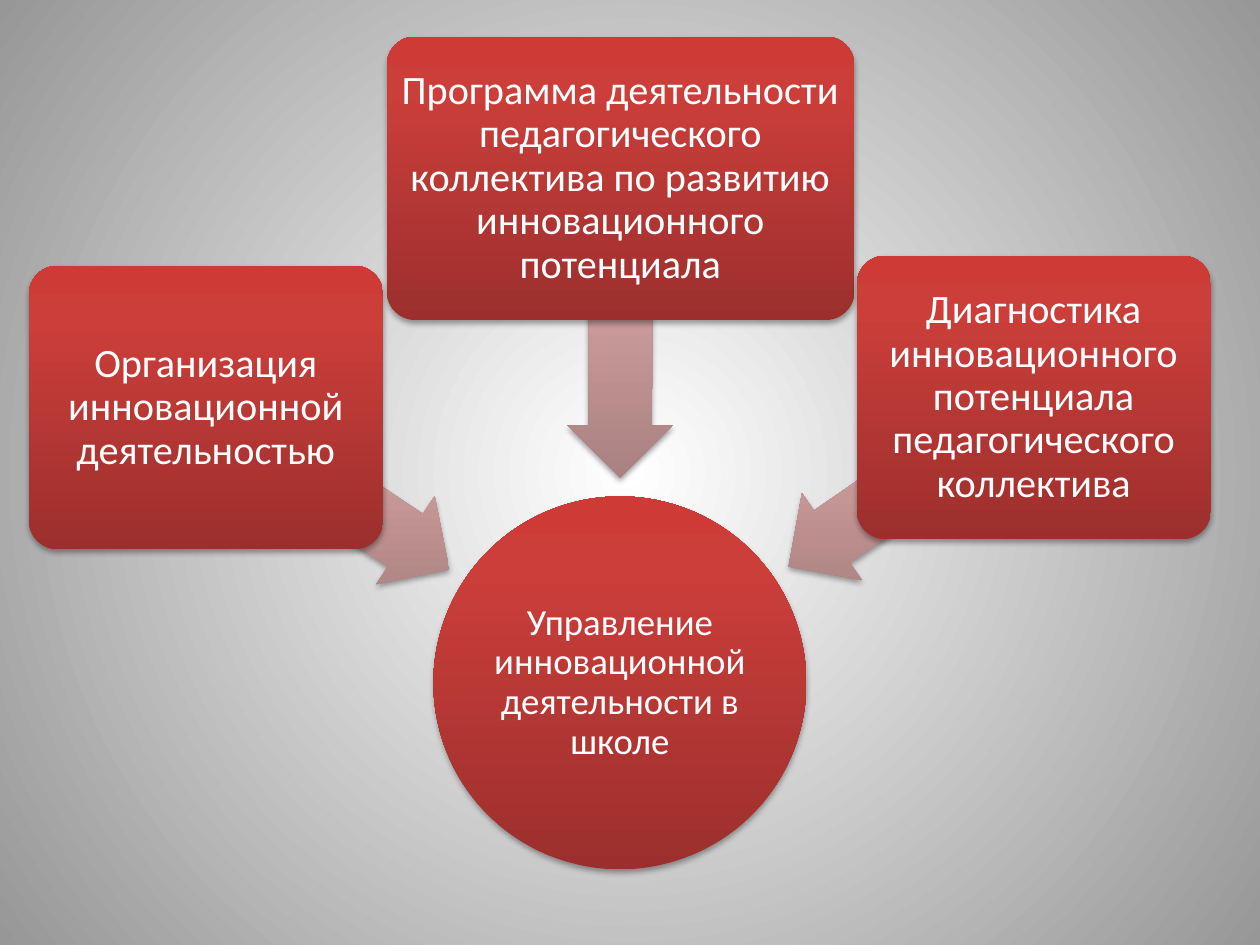
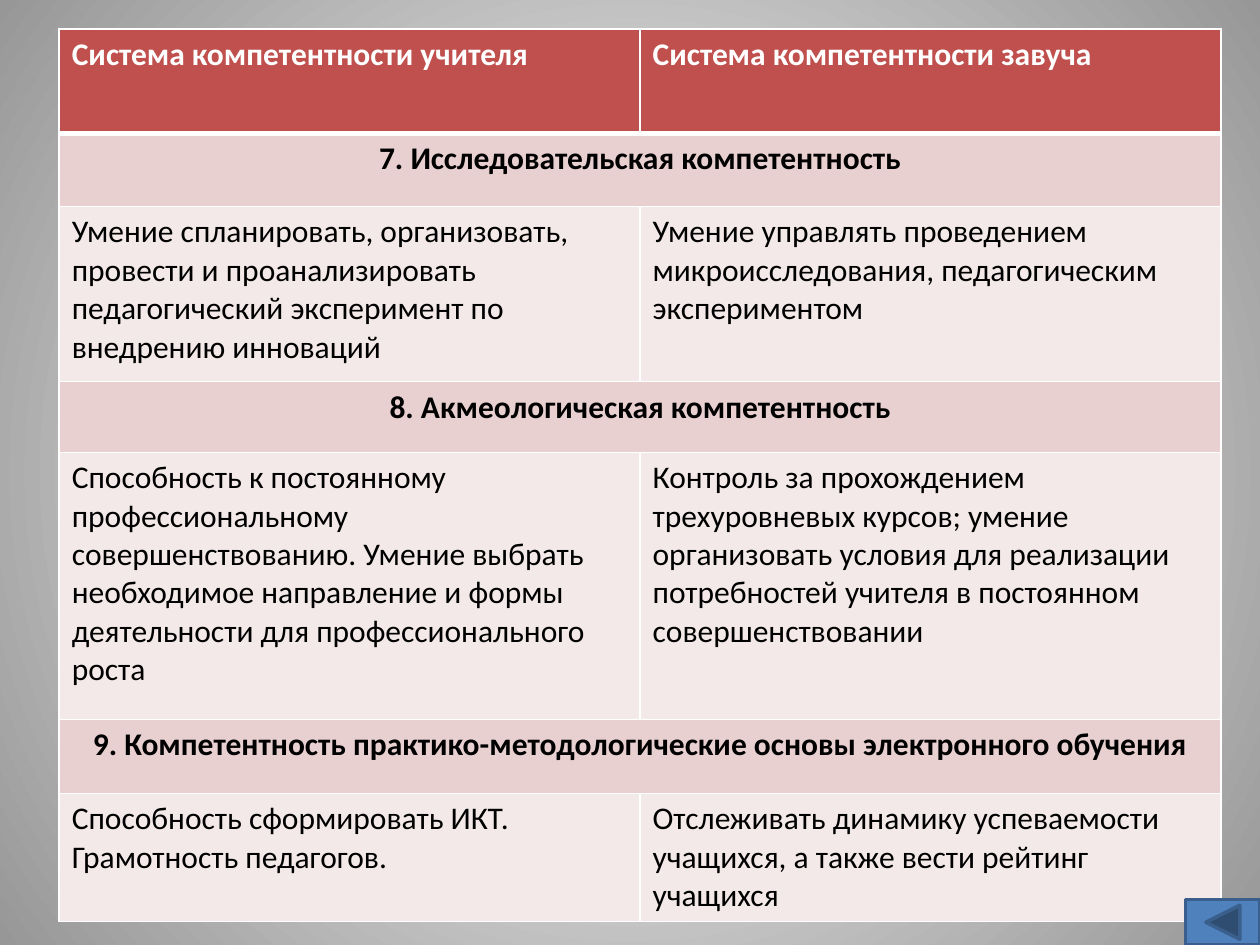
from math import atan2, cos, degrees, hypot, sin

from lxml.etree import SubElement as Sub
from pptx import Presentation
from pptx.dml.color import RGBColor as RGB
from pptx.enum.shapes import MSO_SHAPE as Shape
from pptx.enum.text import MSO_ANCHOR as Anchor, PP_ALIGN as Align
from pptx.oxml.ns import qn
from pptx.util import Inches, Pt

# Slide 1: a hub with a ring of boxes that point at it
HUB = ("Управление инновационной деятельности в школе", 3.44, 3.94, 2.96, 2.96)
BOXES = [
    ("Организация инновационной деятельностью", 0.23, 2.11, 2.81, 2.25),
    ("Программа деятельности педагогического коллектива по развитию "
     "инновационного потенциала", 3.07, 0.29, 3.71, 2.25),
    ("Диагностика инновационного потенциала педагогического коллектива",
     6.8, 2.03, 2.81, 2.25),
]
GAP = 0.145  # from arrow tip to hub
THICK = 0.84

# Slide 2: height and texts of each row; a single text spans both columns
ROWS = [
    (0.83, "Система компетентности учителя", "Система компетентности завуча"),
    (0.58, "7. Исследовательская компетентность"),
    (1.39, "Умение спланировать, организовать, провести и проанализировать "
           "педагогический эксперимент по внедрению инноваций",
           "Умение управлять проведением микроисследования, педагогическим "
           "экспериментом"),
    (0.56, "8. Акмеологическая компетентность"),
    (2.12, "Способность к постоянному профессиональному совершенствованию. "
           "Умение выбрать необходимое направление и формы деятельности для "
           "профессионального роста",
           "Контроль за прохождением трехуровневых курсов; умение организовать "
           "условия для реализации потребностей учителя в постоянном "
           "совершенствовании"),
    (0.59, "9. Компетентность практико-методологические основы электронного "
           "обучения"),
    (0.99, "Способность сформировать ИКТ. Грамотность педагогов.",
           "Отслеживать динамику успеваемости учащихся, а также вести рейтинг "
           "учащихся"),
]
TABLE = (0.47, 0.23, 9.22, 7.06)
BUTTON = (9.41, 7.14, 0.59, 0.36)

FONT = "Calibri"
WHITE = RGB(0xFF, 0xFF, 0xFF)
BLACK = RGB(0, 0, 0)
GREY = RGB(0x97, 0x97, 0x97)
HEAD = RGB(0xC0, 0x50, 0x4D)
BAND = RGB(0xE8, 0xD0, 0xD0)
PALE = RGB(0xF4, 0xE9, 0xE9)
BLUE = RGB(0x4F, 0x81, 0xBD)
NAVY = RGB(0x3A, 0x5F, 0x8C)
BACK = [(0, WHITE), (100, GREY)]
RED = [(0, RGB(0x9C, 0x2F, 0x2D)), (80, RGB(0xCB, 0x3E, 0x3A)),
       (100, RGB(0xCE, 0x3B, 0x37))]
PINK = [(0, RGB(0xA9, 0x81, 0x80)), (80, RGB(0xDB, 0xA7, 0xA7)),
        (100, RGB(0xDD, 0xA7, 0xA6))]


def add(node, tag, **attrs):
    return Sub(node, qn(tag), {k: str(v) for k, v in attrs.items()})


def blend(node, stops, radial=False):
    """Replace the solid fill directly under node with a gradient."""
    old = node.find(qn("a:solidFill"))
    grad = add(node, "a:gradFill", rotWithShape=0)
    node.replace(old, grad)
    group = add(grad, "a:gsLst")
    for pos, color in stops:
        stop = add(group, "a:gs", pos=pos * 1000)
        add(stop, "a:srgbClr", val=color)
    if radial:
        ring = add(grad, "a:path", path="circle")
        add(ring, "a:fillToRect", l=50000, t=50000, r=50000, b=50000)
    else:
        add(grad, "a:lin", ang=270 * 60000, scaled=0)


def write(frame, text, align, **look):
    frame.text = text
    para = frame.paragraphs[0]
    para.alignment = align
    font = para.runs[0].font
    font.name = FONT
    font.color.rgb = look.pop("color")
    for key, val in look.items():
        setattr(font, key, val)
    return para


def place(slide, kind, at):
    shape = slide.shapes.add_shape(kind, *map(Inches, at))
    shape.shadow.inherit = False
    shape.fill.solid()
    return shape


def glossy(slide, kind, at, stops):
    """Shape with a vertical gradient, no outline and a soft shadow."""
    shape = place(slide, kind, at)
    shape.line.fill.background()
    props = shape.element.spPr
    blend(props, stops)
    shade = add(props.find(qn("a:effectLst")), "a:outerShdw", blurRad=Pt(3.1),
                dist=Pt(1.8), dir=90 * 60000, rotWithShape=0)
    color = add(shade, "a:srgbClr", val=BLACK)
    add(color, "a:alpha", val=35000)
    return shape


def label(shape, text, size, inset):
    frame = shape.text_frame
    frame.word_wrap = True
    frame.vertical_anchor = Anchor.MIDDLE
    for side in ("left", "top", "right", "bottom"):
        setattr(frame, "margin_" + side, Inches(inset))
    para = write(frame, text, Align.CENTER, color=WHITE, size=Pt(size))
    para.line_spacing = 0.9


def center(at):
    x, y, w, h = at
    return x + w / 2, y + h / 2


def arrow(slide, box, hub):
    """Arrow from the centre of the box to just short of the hub."""
    (x, y), (hx, hy) = center(box), center(hub)
    turn = atan2(hy - y, hx - x)
    size = hypot(hx - x, hy - y) - hub[2] / 2 - GAP
    mx, my = x + cos(turn) * size / 2, y + sin(turn) * size / 2
    at = (mx - size / 2, my - THICK / 2, size, THICK)
    shape = glossy(slide, Shape.LEFT_ARROW, at, PINK)
    shape.rotation = degrees(turn) + 180
    shape.adjustments[0], shape.adjustments[1] = 0.6, 0.5


def scheme(slide):
    text, *hub = HUB
    label(glossy(slide, Shape.OVAL, hub, RED), text, 21, 0.01)
    for text, *box in BOXES:
        arrow(slide, box, hub)
        shape = glossy(slide, Shape.ROUNDED_RECTANGLE, box, RED)
        shape.adjustments[0] = 0.1
        label(shape, text, 23, 0.05)


def paint(cell, fill, widths):
    """Fill the cell and rule its left, right, top and bottom edges."""
    props = cell._tc.get_or_add_tcPr()
    for side, width in zip("LRTB", widths):
        line = add(props, "a:ln" + side, w=Pt(width))
        add(add(line, "a:solidFill"), "a:srgbClr", val=WHITE)
    cell.fill.solid()
    cell.fill.fore_color.rgb = fill


def matrix(slide):
    grid = slide.shapes.add_table(len(ROWS), 2, *map(Inches, TABLE)).table
    for i, (height, *texts) in enumerate(ROWS):
        grid.rows[i].height = Inches(height)
        head, span = i == 0, len(texts) == 1
        fill = HEAD if head else BAND if span else PALE
        cells = [grid.cell(i, j) for j in range(2)]
        for cell in cells:
            paint(cell, fill, (1, 1, 3 if i == 1 else 1, 3 if head else 1))
        if span:
            cells[0].merge(cells[1])
        for cell, text in zip(cells, texts):
            write(cell.text_frame, text, Align.CENTER if span else Align.LEFT,
                  color=WHITE if head else BLACK, size=Pt(18),
                  bold=head or span)
    button = place(slide, Shape.ACTION_BUTTON_BACK_OR_PREVIOUS, BUTTON)
    button.fill.fore_color.rgb = BLUE
    button.line.color.rgb = NAVY
    button.line.width = Pt(2)


def main():
    prs = Presentation()
    prs.slide_width, prs.slide_height = Inches(10), Inches(7.5)
    master = prs.slide_master
    master.background.fill.solid()
    blend(master.element.find(".//" + qn("p:bgPr")), BACK, radial=True)
    for draw in (scheme, matrix):
        draw(prs.slides.add_slide(prs.slide_layouts[6]))
    prs.save("out.pptx")


if __name__ == "__main__":
    main()
